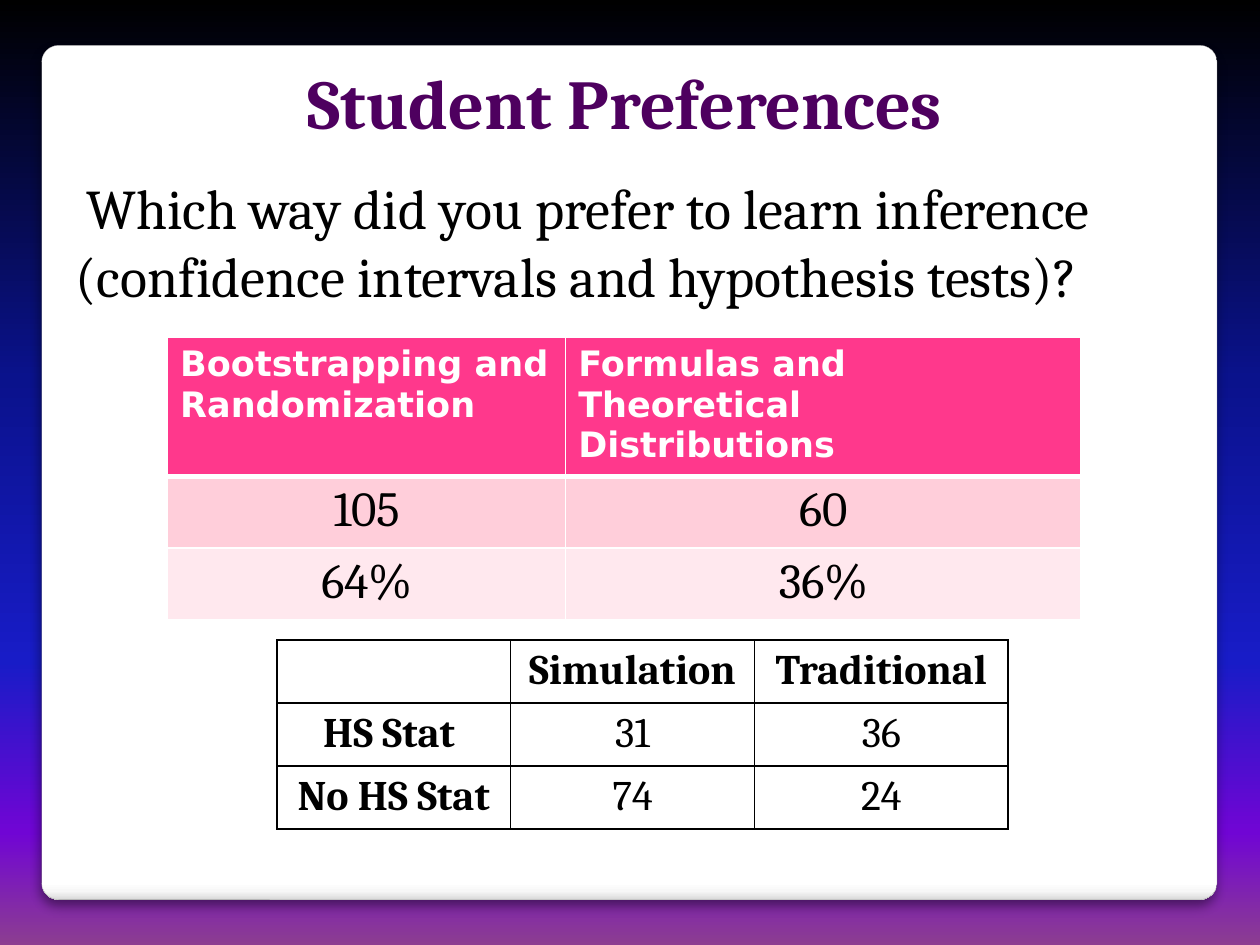
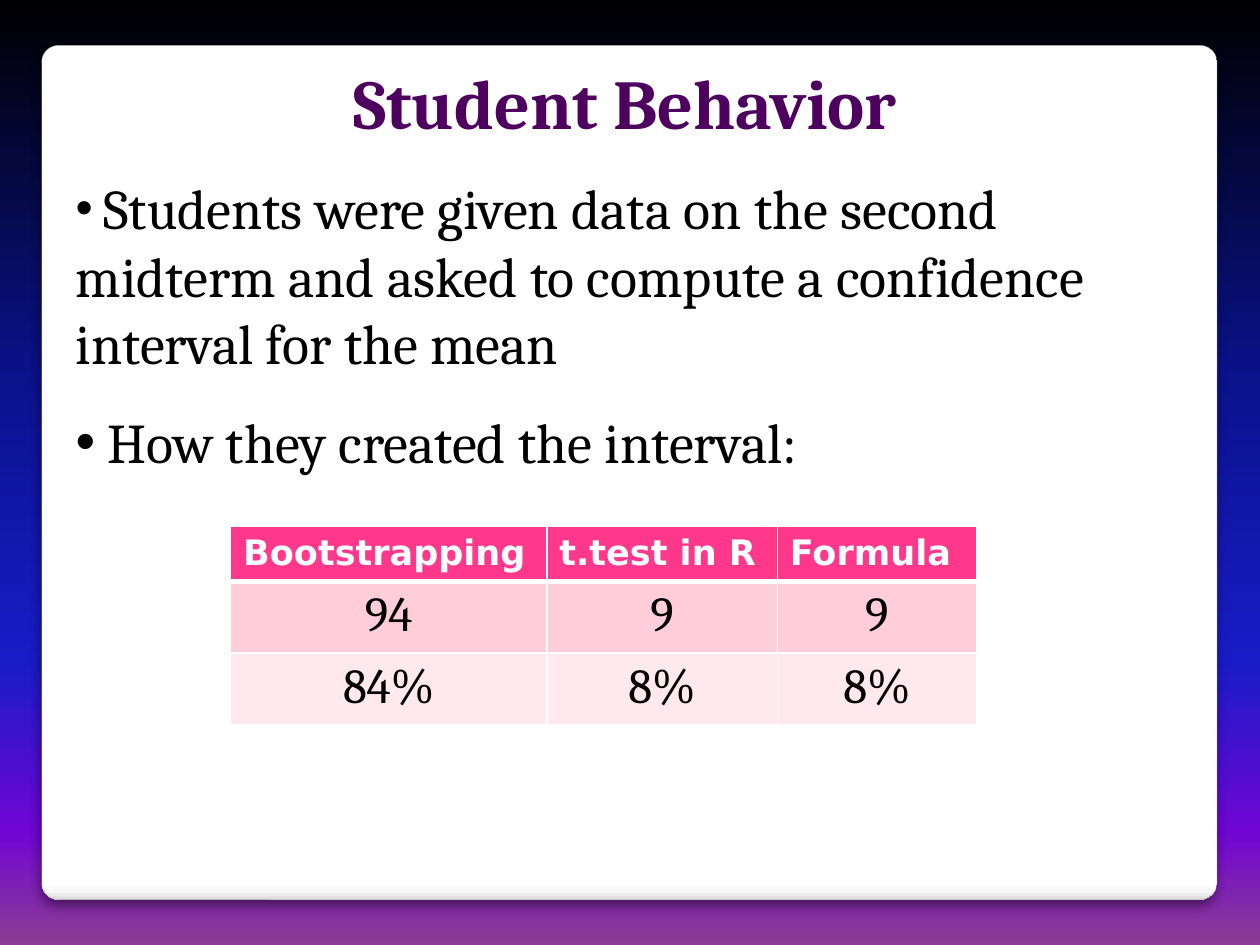
"""Build two slides on student preferences and behavior after learning inference."""
from dataclasses import dataclass

from lxml import etree
from pptx import Presentation
from pptx.dml.color import RGBColor
from pptx.enum.shapes import MSO_SHAPE
from pptx.enum.text import MSO_ANCHOR, MSO_AUTO_SIZE, PP_ALIGN
from pptx.oxml import parse_xml
from pptx.oxml.ns import nsdecls, qn
from pptx.util import Inches, Pt

ROUNDED = MSO_SHAPE.ROUNDED_RECTANGLE
TOP = MSO_ANCHOR.TOP
GROW = MSO_AUTO_SIZE.SHAPE_TO_FIT_TEXT
LEFT, CENTER = PP_ALIGN.LEFT, PP_ALIGN.CENTER


@dataclass(frozen=True)
class Theme:
    """Hold the colours, fonts and text formats of the deck."""
    serif = "Cambria"
    black = "000000"
    white = "FFFFFF"
    pink = "FF388C"
    bands = ("FFCEDA", "FFE8EE")
    panel_line = "A4A4A4"
    background = ((0, "000000"), (40, "0A128C"), (70, "181CC7"), (88, "7005D4"), (100, "8C3D91"))
    panel = ((0, "FFFFFF"), (98, "FFFFFF"), (99, "F7F7F7"), (100, "DADADA"))
    title = {"name": serif, "size": Pt(40), "bold": True, "color": "4E005F"}
    body = {"name": serif, "size": Pt(32), "bold": False, "color": black}
    lead = {**body, "size": Pt(28)}
    header = {"name": "DejaVu Sans", "size": Pt(20), "bold": True, "color": white}
    result = lead
    count = {**body, "size": Pt(24)}
    label = {**count, "bold": True}


THEME = Theme()
TITLE_BOX = (0.5, 0.42, 8.92, 1.33)
PANEL_BOX = (0.33, 0.36, 9.33, 6.78)

SLIDES = [
    {
        "title": "Student Preferences",
        "bullet": False,
        "body_box": (0.5, 1.33, 8.92, 3.32),
        "body": [
            [(" ", THEME.lead),
             ("Which way did you prefer to learn inference "
              "(confidence intervals and hypothesis tests)?", THEME.body)],
        ],
        "tables": [
            {"style": "banded", "at": (1.33, 2.68), "columns": (3.16, 4.09), "rows": (1.09, 0.56, 0.56),
             "cells": [("Bootstrapping and Randomization", "Formulas and Theoretical Distributions"),
                       ("105", "60"),
                       ("64%", "36%")]},
            {"style": "ruled", "at": (2.2, 5.08), "columns": (1.85, 1.94, 2.01), "rows": (0.5, 0.5, 0.5),
             "cells": [("", "Simulation", "Traditional"),
                       ("HS Stat ", "31", "36"),
                       ("No HS Stat", "74", "24")]},
        ],
    },
    {
        "title": "Student Behavior",
        "bullet": True,
        "body_box": (0.5, 1.33, 8.92, 4.64),
        "body": [
            [(" ", THEME.lead),
             ("Students were given data on the second midterm and asked to compute "
              "a confidence interval for the mean", THEME.body)],
            [(" How they created the interval:", THEME.body)],
        ],
        "tables": [
            {"style": "banded", "at": (1.83, 4.18), "columns": (2.51, 1.83, 1.58), "rows": (0.43, 0.56, 0.56),
             "cells": [("Bootstrapping", "t.test in R", "Formula"),
                       ("94", "9", "9"),
                       ("84%", "8%", "8%")]},
        ],
    },
]


def rgb(color):
    return RGBColor.from_string(color)


def place(shape, box):
    for name, length in zip(("left", "top", "width", "height"), box):
        setattr(shape, name, Inches(length))


def add_run(paragraph, text, style):
    run = paragraph.add_run()
    run.text = text
    for name, value in style.items():
        if name == "color":
            run.font.color.rgb = rgb(value)
        else:
            setattr(run.font, name, value)


def paint_gradient(fill, element, stops):
    fill.gradient()
    fill.gradient_angle = 270
    stop_list = next(element.iter(qn("a:gsLst")))
    for stop in list(stop_list):
        stop_list.remove(stop)
    for position, color in stops:
        stop = etree.SubElement(stop_list, qn("a:gs"), pos=str(position * 1000))
        etree.SubElement(stop, qn("a:srgbClr"), val=color)


def add_panel(slide, layout):
    panel = slide.shapes.add_shape(ROUNDED, *map(Inches, PANEL_BOX))
    panel.adjustments[0] = 0.02
    paint_gradient(panel.fill, panel.element, THEME.panel)
    panel.line.color.rgb = rgb(THEME.panel_line)
    panel.line.width = Pt(0.16)
    panel.element.spPr.append(parse_xml(
        f'<a:effectLst {nsdecls("a")}>'
        f'<a:outerShdw blurRad="{Pt(6)}" dist="{Pt(4)}" dir="5400000" rotWithShape="0">'
        f'<a:srgbClr val="{THEME.black}"><a:alpha val="44000"/></a:srgbClr>'
        '</a:outerShdw></a:effectLst>'))
    layout.shapes.element.insert(2, panel.element)


def add_title(slide, text):
    title = slide.shapes.title
    place(title, TITLE_BOX)
    title.text_frame.vertical_anchor = TOP
    paragraph = title.text_frame.paragraphs[0]
    paragraph.alignment = CENTER
    add_run(paragraph, text, THEME.title)


def add_body(slide, content):
    body = slide.placeholders[1]
    place(body, content["body_box"])
    frame = body.text_frame
    for name, value in {"vertical_anchor": TOP, "word_wrap": True, "auto_size": GROW}.items():
        setattr(frame, name, value)
    for index, runs in enumerate(content["body"]):
        paragraph = frame.add_paragraph() if index else frame.paragraphs[0]
        paragraph.space_before, paragraph.space_after = Pt(0), Pt(18)
        properties = paragraph._p.get_or_add_pPr()
        properties.set("marL", "0")
        properties.set("indent", "0")
        if content["bullet"]:
            etree.SubElement(properties, qn("a:buFont"), typeface="Arial")
            etree.SubElement(properties, qn("a:buChar"), char="•")
        else:
            etree.SubElement(properties, qn("a:buNone"))
        for text, style in runs:
            add_run(paragraph, text, style)


def cell_look(kind, row, column):
    """Return text format, alignment, fill, border colour and top and bottom widths."""
    if kind == "ruled":
        style = THEME.count if row and column else THEME.label
        return style, CENTER, THEME.white, THEME.black, 1, 1
    if row == 0:
        return THEME.header, LEFT, THEME.pink, THEME.white, 1, 3
    return THEME.result, CENTER, THEME.bands[(row - 1) % 2], THEME.white, 3 if row == 1 else 1, 1


def set_borders(cell, color, top, bottom):
    properties = cell._tc.get_or_add_tcPr()
    widths = {"lnL": 1, "lnR": 1, "lnT": top, "lnB": bottom}
    for index, (side, width) in enumerate(widths.items()):
        properties.insert(index, parse_xml(
            f'<a:{side} {nsdecls("a")} w="{Pt(width)}"><a:solidFill>'
            f'<a:srgbClr val="{color}"/></a:solidFill></a:{side}>'))


def add_data_table(slide, content):
    columns, rows = content["columns"], content["rows"]
    box = (*content["at"], sum(columns), sum(rows))
    table = slide.shapes.add_table(len(rows), len(columns), *map(Inches, box)).table
    table.first_row = table.horz_banding = False
    for column, width in zip(table.columns, columns):
        column.width = Inches(width)
    for row, height in zip(table.rows, rows):
        row.height = Inches(height)
    for row, texts in enumerate(content["cells"]):
        for column, text in enumerate(texts):
            cell = table.cell(row, column)
            style, alignment, fill, border, top, bottom = cell_look(content["style"], row, column)
            cell.fill.solid()
            cell.fill.fore_color.rgb = rgb(fill)
            set_borders(cell, border, top, bottom)
            paragraph = cell.text_frame.paragraphs[0]
            paragraph.alignment = alignment
            if text:
                add_run(paragraph, text, style)


def main():
    presentation = Presentation()
    presentation.slide_width, presentation.slide_height = Inches(10), Inches(7.5)
    layout = presentation.slide_layouts[1]
    paint_gradient(layout.background.fill, layout.element, THEME.background)
    for index, content in enumerate(SLIDES):
        slide = presentation.slides.add_slide(layout)
        if index == 0:
            add_panel(slide, layout)
        add_title(slide, content["title"])
        add_body(slide, content)
        for table in content["tables"]:
            add_data_table(slide, table)
    presentation.save("out.pptx")


if __name__ == "__main__":
    main()
